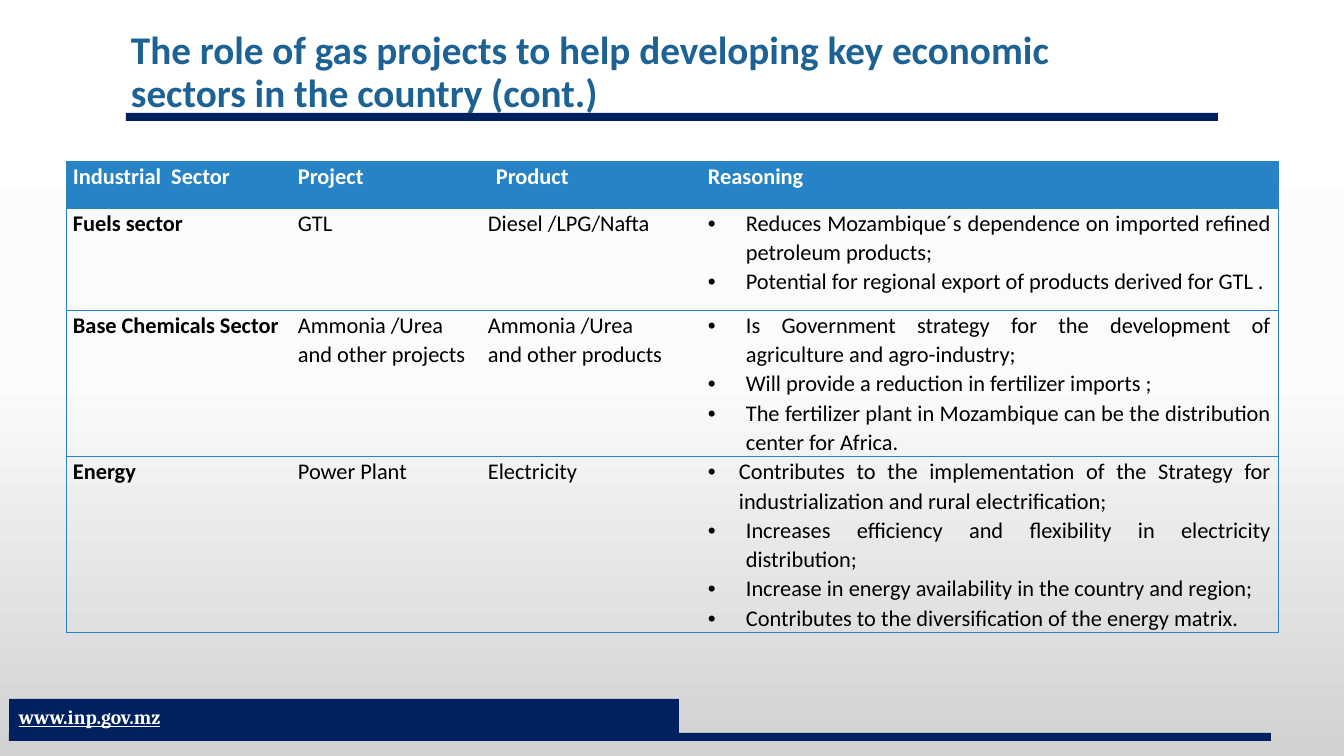
from copy import deepcopy

from lxml import etree
from pptx import Presentation
from pptx import util as u
from pptx.dml.color import RGBColor
from pptx.enum import shapes, text
from pptx.oxml import ns

PX = 914400 / 100.8
COLORS = {
    "navy": "002060",
    "blue": "2683C6",
    "title": "1D6294",
    "white": "FFFFFF",
    "black": "000000",
    "mist": "FBFBFB",
    "gray": "D1D1D1",
}
COLUMNS = [225, 190, 220, 577]
ROWS = [47, 102, 144, 172]
HEADER = ["Industrial  Sector", "Project ", "Product", "Reasoning "]
SECTORS = [
    ["Fuels sector ", "GTL", "Diesel /LPG/Nafta",
     "Reduces Mozambique´s dependence on imported refined petroleum products;\n"
     "Potential for regional export of products derived for GTL ."],
    ["Base Chemicals Sector ", "Ammonia /Urea \nand other projects ",
     "Ammonia /Urea \nand other products",
     "Is Government strategy for the development of agriculture and agro-industry;\n"
     "Will provide a reduction in fertilizer imports ;\n"
     "The fertilizer plant in Mozambique can be the distribution center for Africa."],
    ["Energy ", "Power Plant ", "Electricity ",
     "Contributes to the implementation of the Strategy for industrialization "
     "and rural electrification;\n"
     "Increases efficiency and flexibility in electricity distribution;\n"
     "Increase in energy availability in the country and region;\n"
     "Contributes to the diversification of the energy matrix."],
]


def px(value):
    return u.Emu(round(value * PX))


def rgb(name):
    return RGBColor.from_string(COLORS[name])


def format_runs(paragraph, size, color, bold=True, font="Calibri", underline=None):
    for run in paragraph.runs:
        run.font.name = font
        run.font.size = u.Pt(size)
        run.font.bold = bold
        run.font.underline = underline
        run.font.color.rgb = rgb(color)


def set_background(slide):
    fill = slide.background.fill
    fill.gradient()
    fill.gradient_angle = 270
    first, last = fill.gradient_stops
    first.color.rgb, first.position = rgb("mist"), 0.5
    last.color.rgb, last.position = rgb("gray"), 1
    middle = slide.element.xpath(".//p:bg//a:gs")[0]
    middle.addprevious(deepcopy(middle))
    start = fill.gradient_stops[0]
    start.color.rgb, start.position = rgb("white"), 0


def add_bar(slide, left, top, width, height):
    shape = slide.shapes.add_shape(
        shapes.MSO_SHAPE.RECTANGLE, px(left), px(top), px(width), px(height))
    shape.shadow.inherit = False
    shape.fill.solid()
    shape.fill.fore_color.rgb = rgb("navy")
    shape.line.fill.background()
    return shape


def add_footer(slide):
    add_bar(slide, 9, 733, 1262, 8)
    frame = add_bar(slide, 9, 699, 670, 35).text_frame
    frame.text = "www.inp.gov.mz"
    paragraph = frame.paragraphs[0]
    paragraph.alignment = text.PP_ALIGN.LEFT
    format_runs(paragraph, 14, "white", font="Cambria", underline=True)


def add_title(slide):
    frame = slide.shapes.add_textbox(px(121), px(26), px(1169), px(69)).text_frame
    frame.word_wrap = True
    frame.text = ("The role of gas projects to help developing key economic\n"
                  "sectors in the country (cont.)")
    for paragraph in frame.paragraphs:
        paragraph.line_spacing = 0.9
        format_runs(paragraph, 28, "title")


def set_borders(cell, visible):
    properties = cell._tc.get_or_add_tcPr()
    for side in "LRTB":
        line = etree.SubElement(properties, ns.qn(f"a:ln{side}"), w=str(u.Pt(0.5)))
        if side in visible:
            fill = etree.SubElement(line, ns.qn("a:solidFill"))
            etree.SubElement(fill, ns.qn("a:srgbClr"), val=COLORS["blue"])
        else:
            etree.SubElement(line, ns.qn("a:noFill"))


def set_indent(paragraph, margin, indent):
    properties = paragraph._p.get_or_add_pPr()
    properties.set("marL", str(px(margin)))
    properties.set("indent", str(px(indent)))
    return properties


def add_bullet(paragraph, indent):
    properties = set_indent(paragraph, indent, -indent)
    etree.SubElement(properties, ns.qn("a:buFont"), typeface="Arial")
    etree.SubElement(properties, ns.qn("a:buChar"), char="•")


def fill_cell(cell, content, row, column):
    is_header = row == 0
    cell.margin_left = cell.margin_right = px(7)
    cell.margin_top = cell.margin_bottom = 0
    edges = {0: "L", len(COLUMNS) - 1: "R"}
    set_borders(cell, "TB" + edges.get(column, ""))
    if is_header:
        cell.fill.solid()
        cell.fill.fore_color.rgb = rgb("blue")
    else:
        cell.fill.background()
    cell.text_frame.text = content
    for index, paragraph in enumerate(cell.text_frame.paragraphs):
        if is_header and content == "Product":
            set_indent(paragraph, 0, 8)
        elif not is_header and column == 3:
            add_bullet(paragraph, 31 if row == 3 and index == 0 else 38)
        paragraph.alignment = text.PP_ALIGN.JUSTIFY
        paragraph.line_spacing = 1.07
        format_runs(paragraph, 16, "white" if is_header else "black",
                    bold=is_header or column == 0)


def add_sector_table(slide):
    table = slide.shapes.add_table(
        len(ROWS), len(COLUMNS), px(66), px(161), px(sum(COLUMNS)), px(sum(ROWS))).table
    table.horz_banding = False
    for column, width in zip(table.columns, COLUMNS):
        column.width = px(width)
    for row, height in zip(table.rows, ROWS):
        row.height = px(height)
    for row, contents in enumerate([HEADER] + SECTORS):
        for column, content in enumerate(contents):
            fill_cell(table.cell(row, column), content, row, column)


def main():
    presentation = Presentation()
    presentation.slide_width = px(1344)
    presentation.slide_height = px(756)
    slide = presentation.slides.add_slide(presentation.slide_layouts[6])
    set_background(slide)
    add_bar(slide, 126, 113, 1092, 8)
    add_footer(slide)
    add_sector_table(slide)
    add_title(slide)
    presentation.save("out.pptx")


if __name__ == "__main__":
    main()
